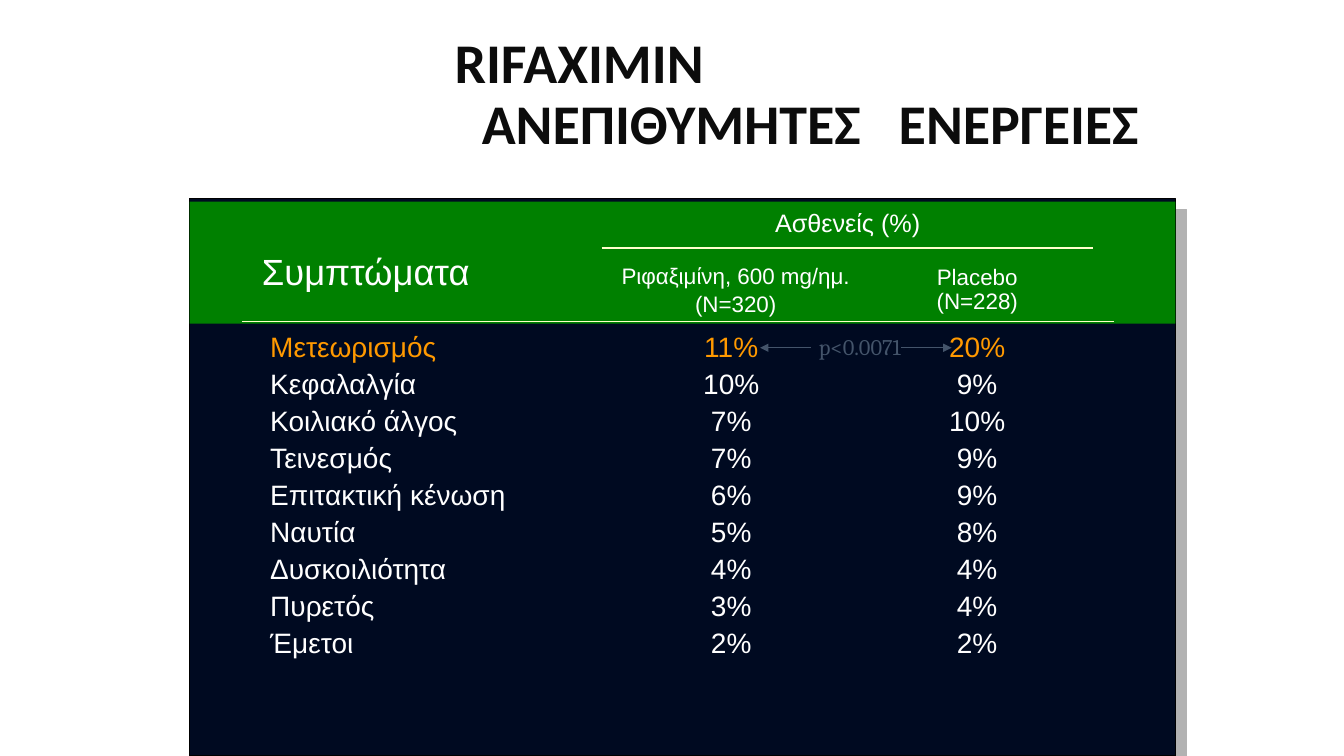
from lxml import etree
from pptx import Presentation
from pptx.dml.color import RGBColor
from pptx.enum import shapes, text
from pptx.oxml import ns
from pptx.util import Pt

LEFT, CENTER = text.PP_ALIGN.LEFT, text.PP_ALIGN.CENTER
MIDDLE, BOTTOM = text.MSO_ANCHOR.MIDDLE, text.MSO_ANCHOR.BOTTOM
NO_GRID = "{2D5ABB26-0587-4C30-8999-92F81FD0307C}"
WHITE, ORANGE, CREAM, SLATE = "FFFFFF", "FF9900", "FFFFCC", "44546A"

SYMPTOMS = [
    ("Μετεωρισμός", "11%", "20%"),
    ("Κεφαλαλγία", "10%", "9%"),
    ("Κοιλιακό άλγος", "7%", "10%"),
    ("Τεινεσμός", "7%", "9%"),
    ("Επιτακτική κένωση", "6%", "9%"),
    ("Ναυτία", "5%", "8%"),
    ("Δυσκοιλιότητα", "4%", "4%"),
    ("Πυρετός", "3%", "4%"),
    ("Έμετοι", "2%", "2%"),
]


def rgb(value):
    return RGBColor.from_string(value)


def add_xml(parent, tag, **attrs):
    return etree.SubElement(parent, ns.qn(tag), attrs)


class SlideBuilder:
    def __init__(self, slide, font="Arial", color=WHITE):
        self.s, self.font, self.color = slide, font, color

    def style(self, p, size, color=None, font=None, align=CENTER, bold=False):
        p.alignment = align
        f = p.font
        f.name, f.size, f.bold = font or self.font, Pt(size), bold
        f.color.rgb = rgb(color or self.color)

    def title(self, x, y, w, h, first, words, indent):
        """First line starts at indent; the words below are centred, set wide apart."""
        sp = self.s.shapes.title
        sp.left, sp.top, sp.width, sp.height = Pt(x), Pt(y), Pt(w), Pt(h)
        tf = sp.text_frame
        tf.auto_size = text.MSO_AUTO_SIZE.NONE
        tf.vertical_anchor = MIDDLE
        tf.text = first
        p = tf.add_paragraph()
        for part in (words[0], " ", words[1]):
            r = p.add_run()
            r.text = part
            if part == " ":
                r.font._element.set("spc", "1800")
        for p, align in zip(tf.paragraphs, (LEFT, CENTER)):
            self.style(p, 40, "0C0C0C", "Calibri", align, bold=True)
            p.line_spacing = 0.9
        tf.paragraphs[0]._p.get_or_add_pPr().set("marL", str(Pt(indent)))

    def rect(self, x, y, w, h, fill, line=None, shadow=None):
        sp = self.s.shapes.add_shape(
            shapes.MSO_SHAPE.RECTANGLE, Pt(x), Pt(y), Pt(w), Pt(h))
        sp.fill.solid()
        sp.fill.fore_color.rgb = rgb(fill)
        if line:
            sp.line.color.rgb = rgb(line)
            sp.line.width = Pt(1)
        else:
            sp.line.fill.background()
        sp.shadow.inherit = False
        if shadow:
            effects = sp._element.spPr.find(ns.qn("a:effectLst"))
            outer = add_xml(effects, "a:outerShdw", blurRad="0", dist=str(Pt(11.3)),
                            dir="2700000", algn="ctr", rotWithShape="0")
            add_xml(outer, "a:srgbClr", val=shadow)

    def label(self, x, y, w, h, words, size, color=None, font=None,
              align=CENTER, anchor=MIDDLE, spacing=None, before=0):
        sp = self.s.shapes.add_textbox(Pt(x), Pt(y), Pt(w), Pt(h))
        tf = sp.text_frame
        tf.word_wrap = True
        tf.vertical_anchor = anchor
        tf.text = words
        for i, p in enumerate(tf.paragraphs):
            self.style(p, size, color, font, align)
            if spacing:
                p.line_spacing = spacing
            if i:
                p.space_before = Pt(before)

    def line(self, x1, x2, y, color, width=1, arrow=None):
        """Horizontal line; arrow is headEnd (at x1) or tailEnd (at x2)."""
        c = self.s.shapes.add_connector(
            shapes.MSO_CONNECTOR.STRAIGHT, Pt(x1), Pt(y), Pt(x2), Pt(y))
        c.line.color.rgb = rgb(color)
        c.line.width = Pt(width)
        if arrow:
            add_xml(c.line._get_or_add_ln(), "a:" + arrow, type="triangle")
        add_xml(c._element.spPr, "a:effectLst")

    def table(self, x, y, widths, row_height, rows):
        """Plain grid whose first row is highlighted."""
        frame = self.s.shapes.add_table(
            len(rows), len(widths), Pt(x), Pt(y),
            Pt(sum(widths)), Pt(row_height * len(rows)))
        table = frame.table
        table.first_row = table.horz_banding = False
        table._tbl.tblPr.find(ns.qn("a:tableStyleId")).text = NO_GRID
        for column, width in zip(table.columns, widths):
            column.width = Pt(width)
        for i, row in enumerate(rows):
            table.rows[i].height = Pt(row_height)
            for j, value in enumerate(row):
                cell = table.cell(i, j)
                cell.fill.background()
                cell.margin_top = cell.margin_bottom = 0
                cell.vertical_anchor = MIDDLE
                cell.text = value
                self.style(cell.text_frame.paragraphs[0], 20,
                           None if i else ORANGE, align=CENTER if j else LEFT)


def main():
    prs = Presentation()
    prs.slide_width, prs.slide_height = Pt(960), Pt(540)
    b = SlideBuilder(prs.slides.add_slide(prs.slide_layouts[5]))

    b.rect(135.4, 141.8, 704.2, 398.2, "000A21", line="000000", shadow="B2B2B2")
    b.rect(135.4, 144, 704.2, 87.1, "008000")
    b.title(120, 23.8, 720, 89.3, "RIFAXIMIN", ("ΑΝΕΠΙΘΥΜΗΤΕΣ", "ΕΝΕΡΓΕΙΕΣ"), 197.5)

    b.label(429.8, 144.7, 351.4, 28, "Ασθενείς (%)", 18)
    b.label(180, 174, 244, 38.6, "Συμπτώματα", 26, align=LEFT, anchor=BOTTOM)
    b.label(429.8, 159.8, 191.5, 70.6, "Ριφαξιμίνη, 600 mg/ημ.\n(N=320)", 16,
            anchor=BOTTOM, spacing=0.9, before=3.2)
    b.label(614.9, 157.7, 166.3, 70.6, "Placebo\v(N=228)", 16,
            anchor=BOTTOM, spacing=0.9)
    b.line(429.8, 780.5, 177.1, CREAM)
    b.line(172.8, 795.6, 229.7, CREAM)

    b.table(185.8, 235.4, (244, 185.1, 166.3), 26.4, SYMPTOMS)

    b.label(576, 234.7, 76.3, 26.6, "p<0.0071", 16, SLATE, "Cambria",
            anchor=text.MSO_ANCHOR.TOP)
    b.line(542.9, 579.6, 248.4, SLATE, 0.75, "headEnd")
    b.line(643.7, 679.7, 248.4, SLATE, 0.75, "tailEnd")

    prs.save("out.pptx")


if __name__ == "__main__":
    main()
